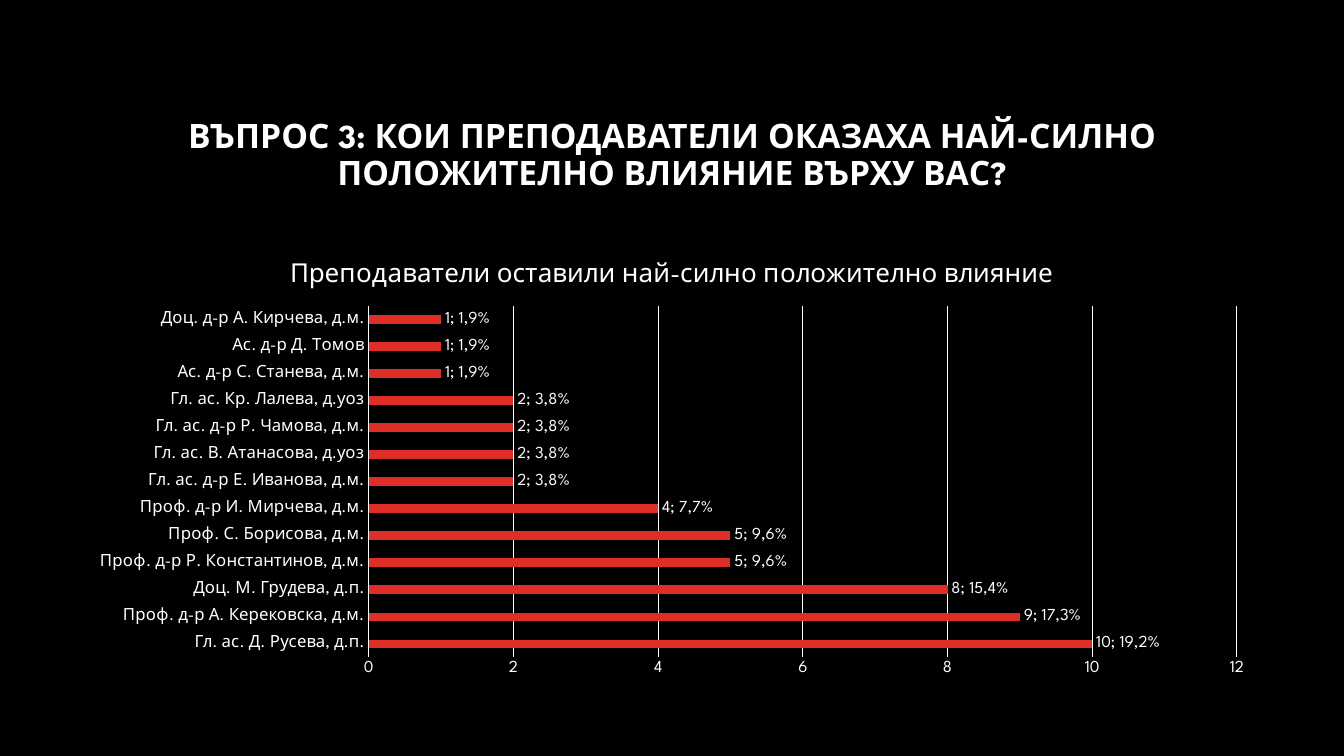
"""Builds the survey slide on the lecturers with the strongest positive influence."""
from pptx import Presentation
from pptx import util as u
from pptx.chart.data import CategoryChartData
from pptx.dml.color import RGBColor
from pptx.enum import chart as ch, text

QUESTION = "ВЪПРОС 3: КОИ ПРЕПОДАВАТЕЛИ ОКАЗАХА НАЙ-СИЛНО ПОЛОЖИТЕЛНО ВЛИЯНИЕ ВЪРХУ ВАС?"
CAPTION = "Преподаватели оставили най-силно положително влияние"
VOTES = {
    "Гл. ас. Д. Русева, д.п.": 10,
    "Проф. д-р А. Керековска, д.м.": 9,
    "Доц. М. Грудева, д.п.": 8,
    "Проф. д-р Р. Константинов, д.м.": 5,
    "Проф. С. Борисова, д.м.": 5,
    "Проф. д-р И. Мирчева, д.м.": 4,
    "Гл. ас. д-р Е. Иванова, д.м.": 2,
    "Гл. ас. В. Атанасова, д.уоз": 2,
    "Гл. ас. д-р Р. Чамова, д.м.": 2,
    "Гл. ас. Кр. Лалева, д.уоз": 2,
    "Ас. д-р С. Станева, д.м.": 1,
    "Ас. д-р Д. Томов": 1,
    "Доц. д-р А. Кирчева, д.м.": 1,
}
SLIDE_SIZE = (1344, 756)
QUESTION_BOX = (76, 85, 1192, 142)
CHART_BOX = (76, 242, 1192, 444)
FONT, WHITE, BLACK, RED = "League Spartan", "FFFFFF", "000000", "DF2E28"


def px(*lengths):
    return [u.Emu(round(n * 914400 / 100.8)) for n in lengths]


def color(value):
    return RGBColor.from_string(value)


def style(font, size, bold=False):
    font.name, font.size, font.bold = FONT, u.Pt(size), bold
    font.color.rgb = color(WHITE)


def add_run(paragraph, words, size, bold=False):
    run = paragraph.add_run()
    run.text = words
    style(run.font, size, bold)


def white_line(line):
    line.color.rgb = color(WHITE)
    line.width = u.Pt(0.75)


def add_question(slide):
    question = slide.shapes.title
    question.left, question.top, question.width, question.height = px(*QUESTION_BOX)
    frame = question.text_frame
    frame.word_wrap = True
    frame.auto_size = text.MSO_AUTO_SIZE.NONE
    frame.vertical_anchor = text.MSO_ANCHOR.MIDDLE
    line = frame.paragraphs[0]
    line.alignment = text.PP_ALIGN.CENTER
    line.line_spacing = 0.9
    add_run(line, QUESTION, 24, True)


def add_votes(slide):
    data = CategoryChartData()
    data.categories = VOTES.keys()
    data.add_series(CAPTION, VOTES.values())
    chart = slide.shapes.add_chart(
        ch.XL_CHART_TYPE.BAR_CLUSTERED, *px(*CHART_BOX), data).chart
    style(chart.font, 10)
    chart.has_legend = False
    chart.has_title = True
    chart.chart_title.include_in_layout = False
    add_run(chart.chart_title.text_frame.paragraphs[0], CAPTION, 18.6)

    lecturers, scale = chart.category_axis, chart.value_axis
    for axis in (lecturers, scale):
        axis.major_tick_mark = axis.minor_tick_mark = ch.XL_TICK_MARK.NONE
        style(axis.tick_labels.font, 12)
    white_line(lecturers.format.line)
    scale.format.line.fill.background()
    scale.has_major_gridlines = True
    white_line(scale.major_gridlines.format.line)
    scale.minimum_scale, scale.maximum_scale, scale.major_unit = 0, 12, 2

    plot = chart.plots[0]
    plot.gap_width = 219
    plot.vary_by_categories = False
    bars = plot.series[0]
    bars.format.fill.solid()
    bars.format.fill.fore_color.rgb = color(RED)
    labels = bars.data_labels
    labels.show_value = True
    labels.position = ch.XL_LABEL_POSITION.OUTSIDE_END
    style(labels.font, 12)
    total = sum(VOTES.values())
    for i, count in enumerate(VOTES.values()):
        label = bars.points[i].data_label
        share = f"{count / total:.1%}".replace(".", ",")
        add_run(label.text_frame.paragraphs[0], f"{count}; {share}", 12)
        label.position = ch.XL_LABEL_POSITION.OUTSIDE_END


def main():
    deck = Presentation()
    deck.slide_width, deck.slide_height = px(*SLIDE_SIZE)
    slide = deck.slides.add_slide(deck.slide_layouts[5])
    slide.background.fill.solid()
    slide.background.fill.fore_color.rgb = color(BLACK)
    add_question(slide)
    add_votes(slide)
    deck.save("out.pptx")


if __name__ == "__main__":
    main()
